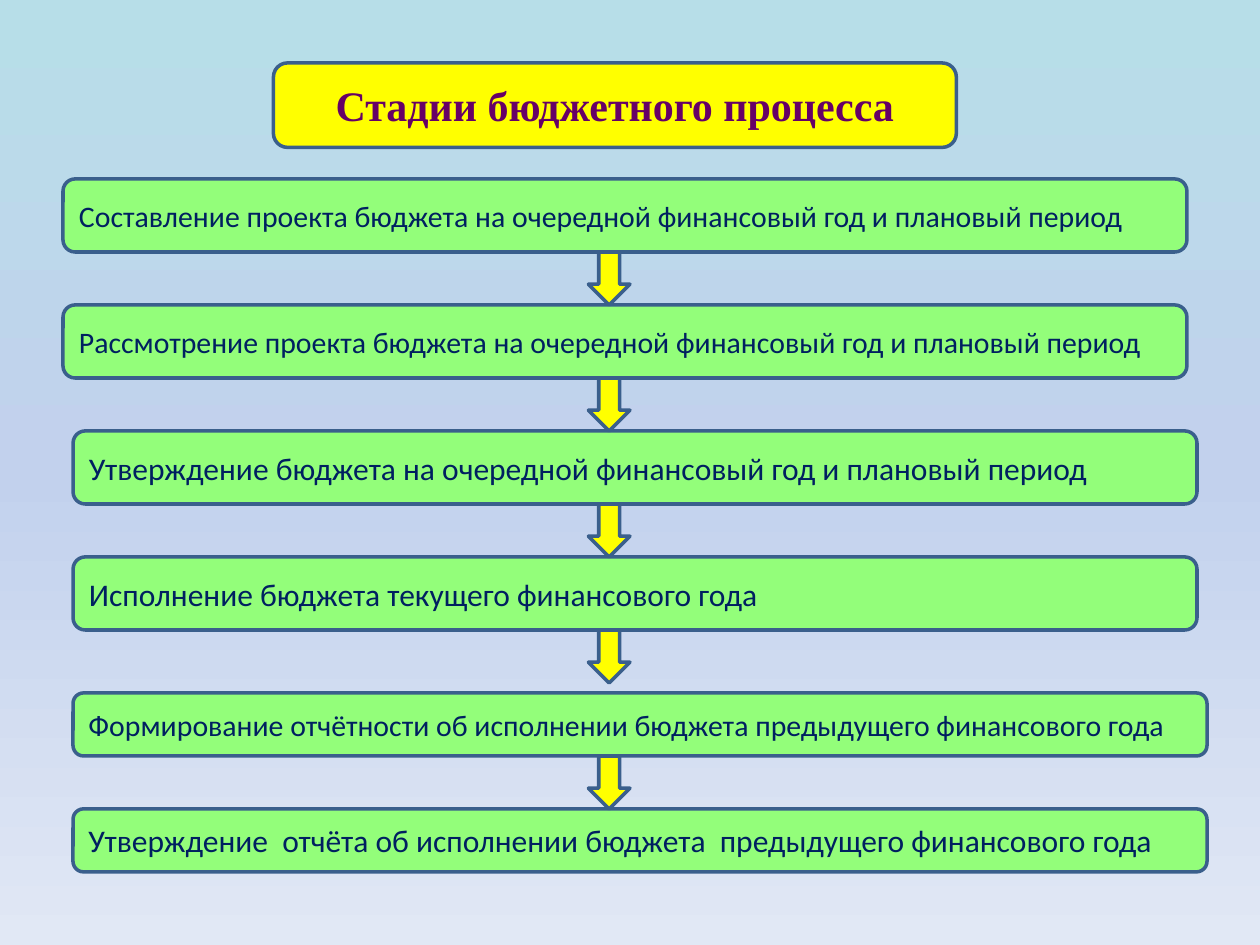
import copy
import pptx
import pptx.dml.color
import pptx.enum.shapes
import pptx.enum.text
import pptx.oxml.ns
import pptx.util

Inches = pptx.util.Inches
Pt = pptx.util.Pt
KIND = pptx.enum.shapes.MSO_SHAPE
ALIGN = pptx.enum.text.PP_ALIGN

SKY = [(0, "B7DEE8"), (0.5, "C2D1ED"), (1, "E1E8F5")]
GREEN, YELLOW, EDGE = "93FE7A", "FFFF00", "3A5F8C"
HEAD = {"name": "Times New Roman", "size": Pt(24), "bold": True}
BODY = {"name": "Calibri", "bold": False}
STAGES = [
    ("Составление проекта бюджета на очередной финансовый год и плановый период", 17, (0.5, 1.42, 8.92, 0.58)),
    ("Рассмотрение проекта бюджета на очередной финансовый год и плановый период", 17, (0.5, 2.42, 8.92, 0.58)),
    ("Утверждение бюджета на очередной финансовый год и плановый период", 18, (0.58, 3.42, 8.92, 0.58)),
    ("Исполнение бюджета текущего финансового года", 18, (0.58, 4.42, 8.92, 0.58)),
    ("Формирование отчётности об исполнении бюджета предыдущего финансового года", 17, (0.58, 5.5, 9, 0.5)),
    ("Утверждение  отчёта об исполнении бюджета  предыдущего финансового года", 18, (0.58, 6.42, 9, 0.5)),
]


def color(code):
    return pptx.dml.color.RGBColor.from_string(code)


def apply(item, form):
    for key, value in form.items():
        setattr(item, key, value)


def paint(slide):
    fill = slide.background.fill
    fill.gradient()
    fill.gradient_angle = 270
    stops = slide.element.find(".//" + pptx.oxml.ns.qn("a:gsLst"))
    stops.append(copy.deepcopy(stops[0]))
    for stop, (place, code) in zip(fill.gradient_stops, SKY):
        stop.position = place
        stop.color.rgb = color(code)


def block(slide, kind, spot, fill):
    shape = slide.shapes.add_shape(kind, *map(Inches, spot))
    shape.shadow.inherit = False
    shape.fill.solid()
    shape.fill.fore_color.rgb = color(fill)
    shape.line.color.rgb = color(EDGE)
    shape.line.width = Pt(2)
    return shape


def label(slide, spot, fill, text, ink, align, form):
    shape = block(slide, KIND.ROUNDED_RECTANGLE, spot, fill)
    frame = shape.text_frame
    apply(frame, {"word_wrap": True, "vertical_anchor": pptx.enum.text.MSO_ANCHOR.MIDDLE})
    line = frame.paragraphs[0]
    line.alignment = align
    run = line.add_run()
    run.text = text
    apply(run.font, form)
    run.font.color.rgb = color(ink)


def main():
    deck = pptx.Presentation()
    apply(deck, {"slide_width": Inches(10), "slide_height": Inches(7.5)})
    slide = deck.slides.add_slide(deck.slide_layouts[6])
    paint(slide)
    for text, size, spot in STAGES:
        label(slide, spot, GREEN, text, "002060", ALIGN.LEFT, {**BODY, "size": Pt(size)})
    label(slide, (2.17, 0.5, 5.42, 0.67), YELLOW, "Стадии бюджетного процесса", "660066", ALIGN.CENTER, HEAD)
    for step in range(len(STAGES) - 1):
        block(slide, KIND.DOWN_ARROW, (4.67, 2 + step, 0.33, 0.42), YELLOW)
    deck.save("out.pptx")


if __name__ == "__main__":
    main()
